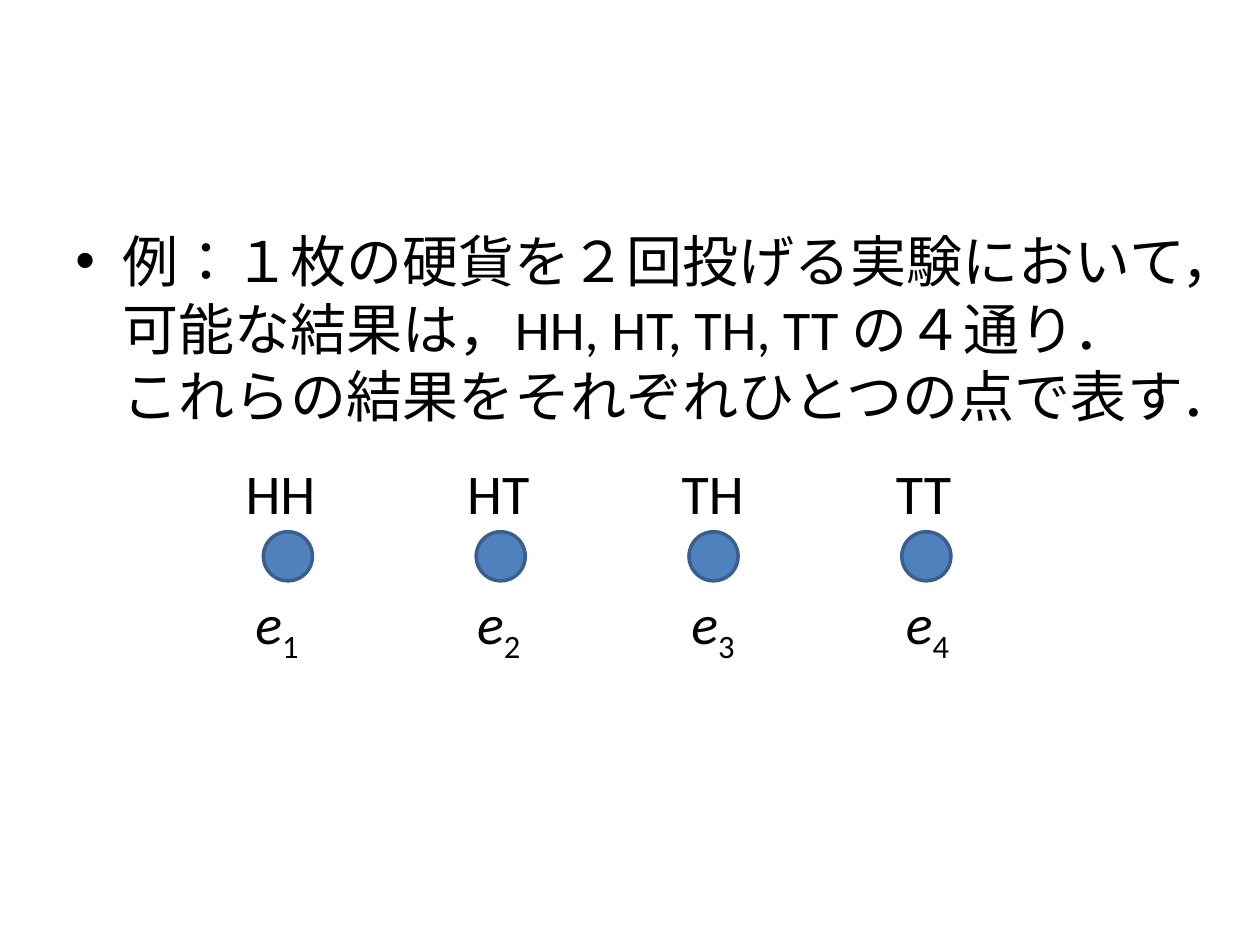
from dataclasses import dataclass
from typing import Any

from lxml.etree import SubElement
from pptx import Presentation
from pptx.dml.color import RGBColor
from pptx.enum.lang import MSO_LANGUAGE_ID
from pptx.enum.shapes import MSO_SHAPE
from pptx.enum.text import MSO_AUTO_SIZE
from pptx.oxml.ns import qn
from pptx.slide import Slide
from pptx.util import Cm, Pt

BLACK = RGBColor(0x00, 0x00, 0x00)
BLUE = RGBColor(0x4F, 0x81, 0xBD)
DARK_BLUE = RGBColor(0x3A, 0x5F, 0x8C)

TEXT_FORMAT = {"name": "Calibri", "size": Pt(32)}
STATEMENT = (
    "例：１枚の硬貨を２回投げる実験において，可能な結果は，HH, HT, TH, TT の４通り．"
    "これらの結果をそれぞれひとつの点で表す．"
)
FIRST_DOT_LEFT, DOT_PITCH, DOT_TOP, DOT_SIZE = 5.31, 4.29, 10.72, 0.99
LABEL_TOP, EVENT_TOP, LABEL_HEIGHT = 9.12, 11.73, 1.63
EVENT_INDENT, EVENT_WIDTH = 0.2, 1.47


@dataclass
class Outcome:
    name: str
    left: float
    width: float


OUTCOMES = [
    Outcome("HH", 4.7, 1.93),
    Outcome("HT", 9.17, 1.78),
    Outcome("TH", 13.49, 1.78),
    Outcome("TT", 17.81, 1.65),
]


def add_span(para: Any, text: str, **extra: Any) -> Any:
    span = para.add_run()
    span.text = text
    for name, value in {**TEXT_FORMAT, **extra}.items():
        setattr(span.font, name, value)
    span.font.color.rgb = BLACK
    return span


def add_statement(page: Slide) -> None:
    box = page.shapes.add_textbox(Cm(1.27), Cm(4.45), Cm(22.86), Cm(12.57))
    box.text_frame.word_wrap = True
    para = box.text_frame.paragraphs[0]
    para.space_before = Pt(6.4)
    add_span(para, STATEMENT, language_id=MSO_LANGUAGE_ID.JAPANESE)
    properties = para._p.get_or_add_pPr()
    properties.set("marL", str(Cm(0.95)))
    properties.set("indent", str(-Cm(0.95)))
    SubElement(properties, qn("a:buFont"), typeface="Arial")
    SubElement(properties, qn("a:buChar"), char="•")


def add_label(page: Slide, left: float, top: float, width: float) -> Any:
    box = page.shapes.add_textbox(Cm(left), Cm(top), Cm(width), Cm(LABEL_HEIGHT))
    box.text_frame.word_wrap = False
    box.text_frame.auto_size = MSO_AUTO_SIZE.SHAPE_TO_FIT_TEXT
    return box.text_frame.paragraphs[0]


def add_dot(page: Slide, left: float) -> None:
    dot = page.shapes.add_shape(
        MSO_SHAPE.OVAL, Cm(left), Cm(DOT_TOP), Cm(DOT_SIZE), Cm(DOT_SIZE)
    )
    dot.shadow.inherit = False
    dot.fill.solid()
    dot.fill.fore_color.rgb = BLUE
    dot.line.color.rgb = DARK_BLUE
    dot.line.width = Pt(2)


def add_outcome(page: Slide, index: int, outcome: Outcome) -> None:
    add_dot(page, FIRST_DOT_LEFT + index * DOT_PITCH)
    add_span(add_label(page, outcome.left, LABEL_TOP, outcome.width), outcome.name)
    para = add_label(page, outcome.left + EVENT_INDENT, EVENT_TOP, EVENT_WIDTH)
    add_span(para, "e", italic=True)
    subscript = add_span(para, str(index + 1))
    subscript._r.get_or_add_rPr().set("baseline", "-25000")


def main() -> None:
    deck = Presentation()
    deck.slide_width, deck.slide_height = Cm(25.4), Cm(19.05)
    page = deck.slides.add_slide(deck.slide_layouts[6])
    add_statement(page)
    for index, outcome in enumerate(OUTCOMES):
        add_outcome(page, index, outcome)
    deck.save("out.pptx")


if __name__ == "__main__":
    main()
